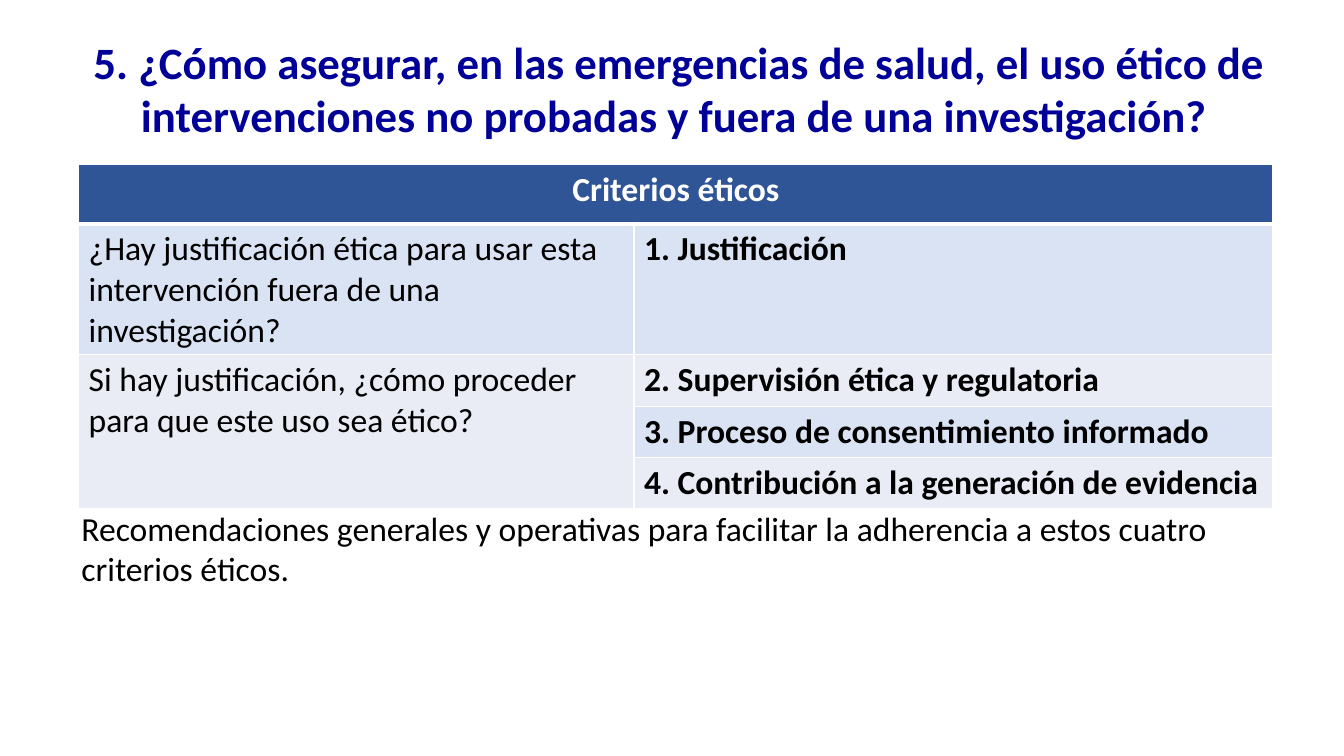
from dataclasses import dataclass
from typing import Optional

from lxml.etree import SubElement
from pptx import Presentation
from pptx.dml.color import RGBColor as RGB
from pptx.enum.text import MSO_AUTO_SIZE as AutoSize, PP_ALIGN as Align
from pptx.oxml.ns import qn
from pptx.util import Pt


@dataclass(frozen=True)
class Theme:
    font: str = "Calibri"
    title_size: float = 32
    body_size: float = 24
    title: str = "000099"
    text: str = "000000"
    white: str = "FFFFFF"
    header: str = "2F5597"
    bands: tuple[str, str] = ("DAE3F3", "E9EBF5")
    border: float = 1
    header_border: float = 3


@dataclass(frozen=True)
class TextBox:
    text: str
    left: float
    top: float
    width: float
    height: float
    size: float
    color: str
    bold: bool = False
    align: Optional[Align] = None


@dataclass(frozen=True)
class Row:
    height: float
    question: str
    criterion: str = ""


THEME = Theme()
TITLE = TextBox(
    "5. ¿Cómo asegurar, en las emergencias de salud, el uso ético de "
    "intervenciones no probadas y fuera de una investigación? ",
    44.64, 20.88, 881.28, 84.96, THEME.title_size, THEME.title, True, Align.CENTER)
NOTE = TextBox(
    "Recomendaciones generales y operativas para facilitar la adherencia "
    "a estos cuatro criterios éticos.",
    51.12, 359.28, 900, 65.52, THEME.body_size, THEME.text)
TABLE_LEFT, TABLE_TOP = 56.16, 117.36
COLUMNS = (396.72, 456.48)
ROWS = (
    Row(42.48, "Criterios éticos"),
    Row(64.8, "¿Hay justificación ética para usar esta intervención fuera de una investigación?",
        "1. Justificación"),
    Row(36.72, "Si hay justificación, ¿cómo proceder para que este uso sea ético?",
        "2. Supervisión ética y regulatoria"),
    Row(36.72, "", "3. Proceso de consentimiento informado"),
    Row(36.72, "", "4. Contribución a la generación de evidencia"),
)


def write(tf, text: str, size: float, color: str, bold: bool, align: Optional[Align]) -> None:
    """Fill a text frame with one formatted paragraph."""
    tf.text = text
    p = tf.paragraphs[0]
    p.alignment = align
    for font in (p.font, *(r.font for r in p.runs)):
        font.name = THEME.font
        font.size = Pt(size)
        font.bold = bold
        font.color.rgb = RGB.from_string(color)


def add_text(s, box: TextBox) -> None:
    """Add a wrapping text box."""
    sp = s.shapes.add_textbox(Pt(box.left), Pt(box.top), Pt(box.width), Pt(box.height))
    tf = sp.text_frame
    tf.word_wrap = True
    tf.auto_size = AutoSize.SHAPE_TO_FIT_TEXT
    write(tf, box.text, box.size, box.color, box.bold, box.align)


def set_borders(cell, top: float, bottom: float) -> None:
    """Draw white borders around a cell ahead of its fill."""
    tc_pr = cell._tc.get_or_add_tcPr()
    sides = (("lnL", THEME.border), ("lnR", THEME.border), ("lnT", top), ("lnB", bottom))
    for side, width in sides:
        ln = SubElement(tc_pr, qn(f"a:{side}"), w=str(Pt(width)))
        SubElement(SubElement(ln, qn("a:solidFill")), qn("a:srgbClr"), val=THEME.white)


def add_criteria(s) -> None:
    """Add the table of ethical criteria."""
    frame = s.shapes.add_table(
        len(ROWS), len(COLUMNS), Pt(TABLE_LEFT), Pt(TABLE_TOP),
        Pt(sum(COLUMNS)), Pt(sum(row.height for row in ROWS)))
    table = frame.table
    for column, width in zip(table.columns, COLUMNS):
        column.width = Pt(width)
    table.cell(0, 0).merge(table.cell(0, 1))
    table.cell(2, 0).merge(table.cell(4, 0))
    for i, row in enumerate(ROWS):
        table.rows[i].height = Pt(row.height)
        header = i == 0
        for j, text in enumerate((row.question, row.criterion)):
            cell = table.cell(i, j)
            set_borders(cell, THEME.header_border if i == 1 else THEME.border,
                        THEME.header_border if header else THEME.border)
            band = 1 if j == 0 and i > 1 else (i - 1) % 2
            cell.fill.solid()
            cell.fill.fore_color.rgb = RGB.from_string(
                THEME.header if header else THEME.bands[band])
            write(cell.text_frame, text, THEME.body_size,
                  THEME.white if header else THEME.text,
                  header or j == 1, Align.CENTER if header else None)


def main() -> None:
    """Build and save the slide."""
    prs = Presentation()
    prs.slide_width, prs.slide_height = Pt(960), Pt(540)
    s = prs.slides.add_slide(prs.slide_layouts[6])
    add_text(s, TITLE)
    add_criteria(s)
    add_text(s, NOTE)
    prs.save("out.pptx")


if __name__ == "__main__":
    main()
